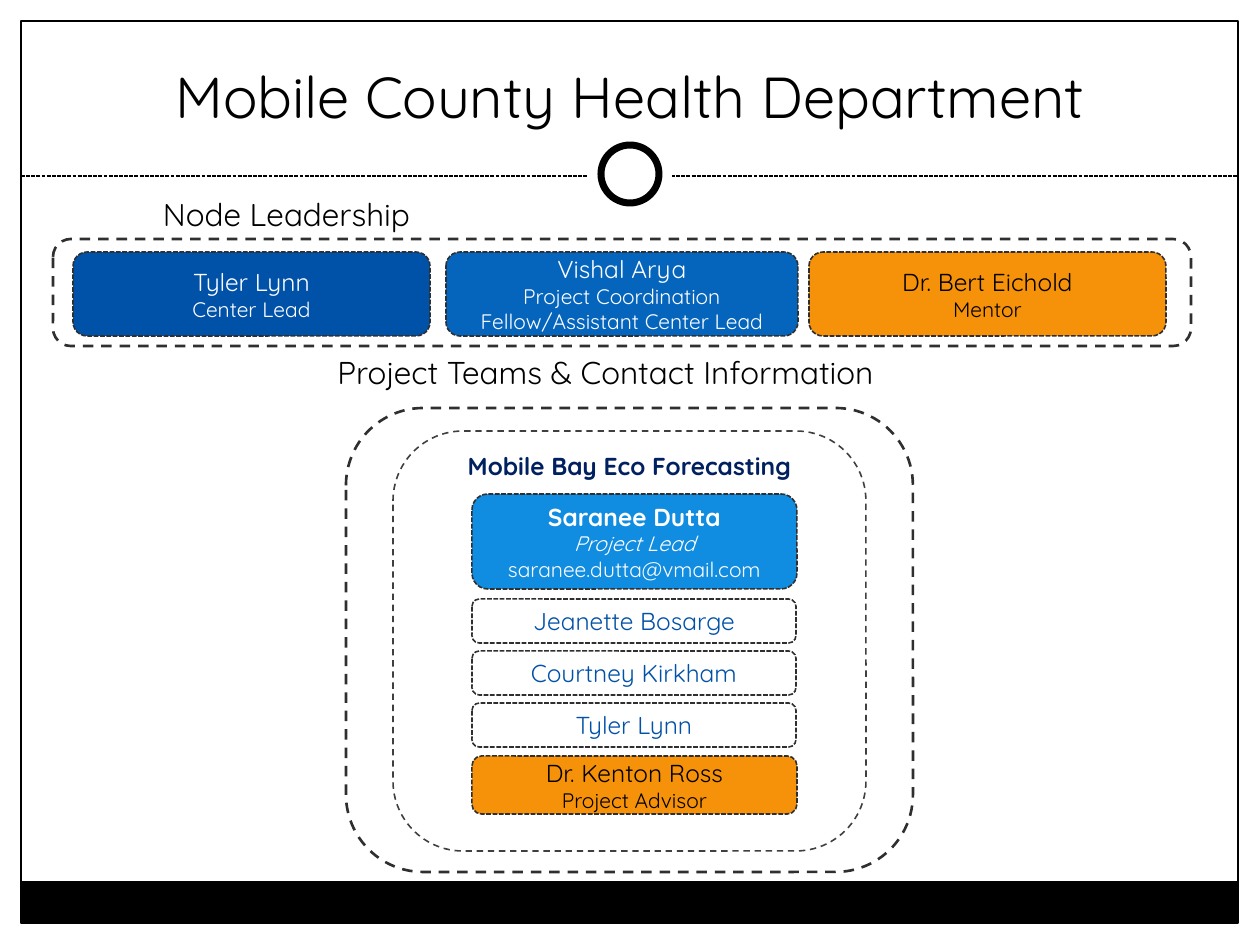
from dataclasses import dataclass, field
from typing import Optional

from lxml import etree
from pptx import Presentation
from pptx import util as u
from pptx.dml.color import RGBColor
from pptx.enum import dml, shapes, text
from pptx.oxml import ns

PX = 914400 / 126
Box = tuple[int, int, int, int]


@dataclass(frozen=True)
class Theme:
    font: str = "Quicksand"
    black: str = "000000"
    white: str = "FFFFFF"
    navy: str = "002060"
    blue: str = "0051A8"
    mid_blue: str = "0565BC"
    light_blue: str = "108CE0"
    orange: str = "F6910A"
    dark: str = "2F2F2F"
    grey: str = "3F3F3F"
    title: float = 33
    heading: float = 18
    name: float = 14
    role: float = 12
    hairline: float = 0.75
    thin: float = 0.9
    thick: float = 1.5
    ring: float = 4


T = Theme()
DASH = dml.MSO_LINE.DASH
SYS_DASH = dml.MSO_LINE.SQUARE_DOT
CENTER = text.PP_ALIGN.CENTER
LEFT = text.PP_ALIGN.LEFT


@dataclass(frozen=True)
class Line:
    words: str
    size: float
    style: dict[str, bool] = field(default_factory=dict)


@dataclass(frozen=True)
class Card:
    box: Box
    lines: tuple[Line, ...]
    color: str
    fill: Optional[str] = None


def emu(*px: int) -> list[u.Emu]:
    return [u.Emu(round(v * PX)) for v in px]


def write(tf, lines: tuple[Line, ...], color: str, align=CENTER, **frame) -> None:
    for key, value in {"word_wrap": True, **frame}.items():
        setattr(tf, key, value)
    for i, line in enumerate(lines):
        p = tf.paragraphs[0] if i == 0 else tf.add_paragraph()
        p.alignment = align
        r = p.add_run()
        r.text = line.words
        look = {"name": T.font, "size": u.Pt(line.size), "bold": False, **line.style}
        for key, value in look.items():
            setattr(r.font, key, value)
        r.font.color.rgb = RGBColor.from_string(color)


def draw_line(line, color: str, width: float, dash=None) -> None:
    line.color.rgb = RGBColor.from_string(color)
    line.width = u.Pt(width)
    if dash:
        line.dash_style = dash


def add_box(s, kind, box: Box, fill: Optional[str] = None, outline: Optional[tuple] = None):
    sp = s.shapes.add_shape(kind, *emu(*box))
    sp.shadow.inherit = False
    if fill:
        sp.fill.solid()
        sp.fill.fore_color.rgb = RGBColor.from_string(fill)
    else:
        sp.fill.background()
    if outline:
        draw_line(sp.line, *outline)
    else:
        sp.line.fill.background()
    return sp


def add_frame(s, box: Box, color: str, width: float):
    return add_box(s, shapes.MSO_SHAPE.ROUNDED_RECTANGLE, box, None, (color, width, DASH))


def add_card(s, card: Card) -> None:
    sp = add_box(s, shapes.MSO_SHAPE.ROUNDED_RECTANGLE, card.box, card.fill,
                 (T.dark, T.thin, SYS_DASH))
    write(sp.text_frame, card.lines, card.color, vertical_anchor=text.MSO_ANCHOR.MIDDLE)


def add_heading(s, words: str, box: Box, align) -> None:
    sp = s.shapes.add_textbox(*emu(*box))
    write(sp.text_frame, (Line(words, T.heading),), T.black, align)


def add_backdrop(s) -> None:
    rect, oval = shapes.MSO_SHAPE.RECTANGLE, shapes.MSO_SHAPE.OVAL
    add_box(s, rect, (21, 881, 1217, 43), T.black)
    add_box(s, rect, (21, 21, 1217, 902), None, (T.black, T.hairline))
    rule = s.shapes.add_connector(shapes.MSO_CONNECTOR.STRAIGHT, *emu(21, 176, 1238, 176))
    draw_line(rule.line, T.black, T.hairline, SYS_DASH)
    etree.SubElement(rule._element.spPr, ns.qn("a:effectLst"))
    add_box(s, oval, (588, 132, 84, 84), T.white)
    add_box(s, oval, (601, 145, 58, 58), T.white, (T.black, T.ring))


def add_title(s, words: str) -> None:
    sp = s.shapes.title
    for key, value in zip(("left", "top", "width", "height"), emu(42, 32, 1176, 104)):
        setattr(sp, key, value)
    write(sp.text_frame, (Line(words, T.title),), T.black,
          vertical_anchor=text.MSO_ANCHOR.BOTTOM)


def person(name: str, *roles: str) -> tuple[Line, ...]:
    return (Line(name, T.name), *(Line(role, T.role) for role in roles))


LEADERS = (
    Card((73, 252, 357, 84), person("Tyler Lynn", "Center Lead"), T.white, T.blue),
    Card((446, 252, 352, 84),
         person("Vishal Arya", "Project Coordination Fellow/Assistant Center Lead"),
         T.white, T.mid_blue),
    Card((809, 252, 357, 84), person("Dr. Bert Eichold", "Mentor"), T.black, T.orange),
)
LEAD = Card(
    (472, 494, 325, 95),
    (Line("Saranee Dutta", T.name, {"bold": True}),
     Line("Project Lead", T.role, {"italic": True}),
     Line("saranee.dutta@vmail.com", T.role)),
    T.white, T.light_blue)
MEMBERS = tuple(
    Card((472, 599 + 52 * i, 324, 44), person(name), T.blue)
    for i, name in enumerate(("Jeanette Bosarge", "Courtney Kirkham", "Tyler Lynn")))
ADVISOR = Card((472, 756, 325, 58), person("Dr. Kenton Ross", "Project Advisor"),
               T.black, T.orange)


def main() -> None:
    prs = Presentation()
    prs.slide_width, prs.slide_height = emu(1260, 945)
    s = prs.slides.add_slide(prs.slide_layouts[5])
    add_backdrop(s)
    add_title(s, "Mobile County Health Department")

    add_heading(s, "Node Leadership", (141, 189, 291, 50), CENTER)
    add_frame(s, (53, 239, 1138, 107), T.dark, T.thick)

    add_heading(s, "Project Teams & Contact Information", (325, 347, 596, 50), LEFT)
    add_frame(s, (346, 408, 567, 464), T.dark, T.thick)
    team = add_frame(s, (393, 431, 473, 420), T.grey, T.thin)
    write(team.text_frame, (Line("Mobile Bay Eco Forecasting", T.name, {"bold": True}),),
          T.navy, vertical_anchor=text.MSO_ANCHOR.TOP, margin_top=0)

    for card in (*LEADERS, LEAD, *MEMBERS, ADVISOR):
        add_card(s, card)
    prs.save("out.pptx")


if __name__ == "__main__":
    main()
